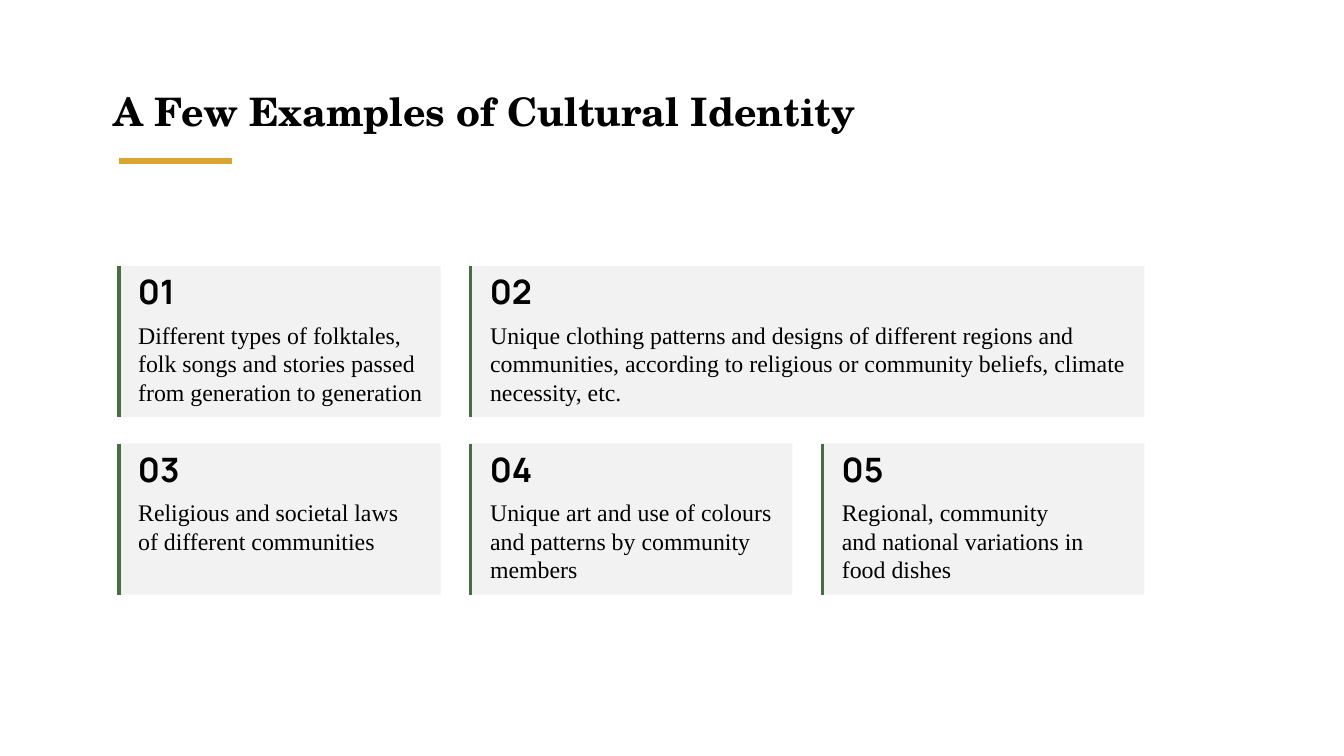
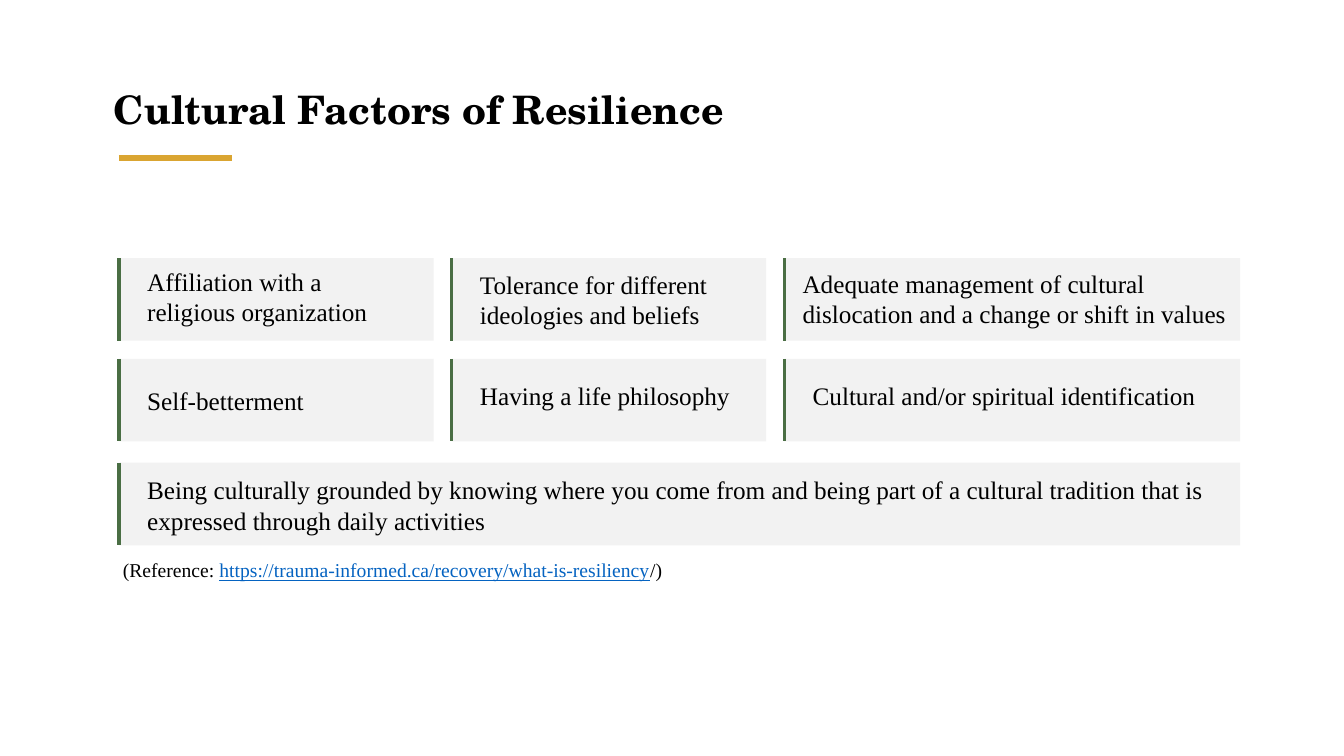
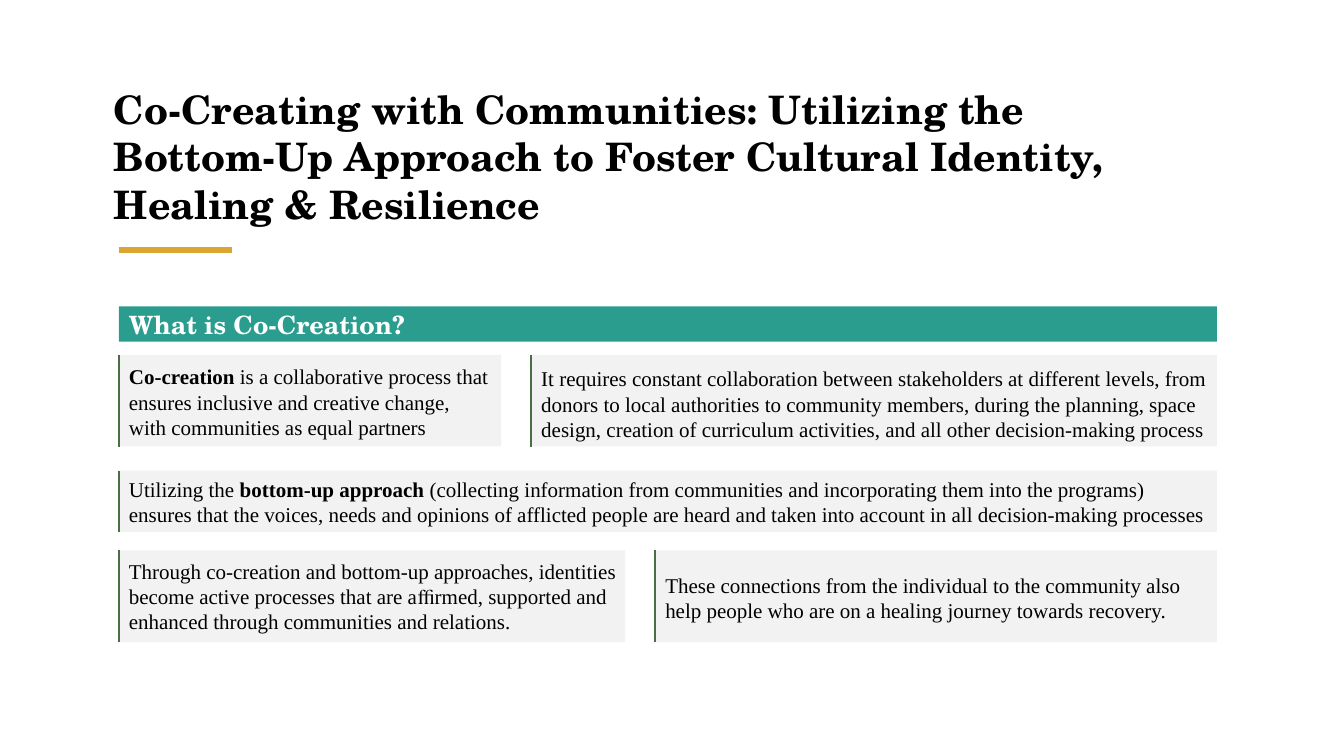
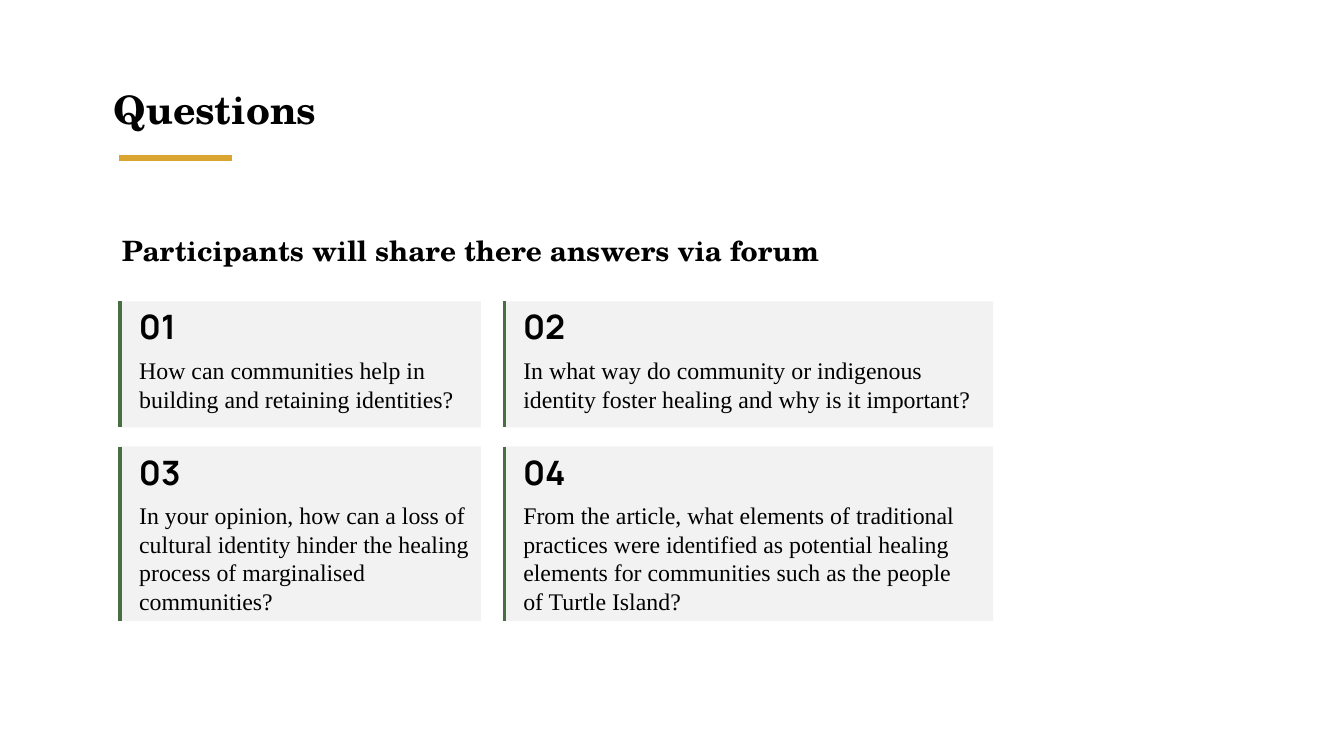
from lxml import etree
from pptx import Presentation
from pptx.dml.color import RGBColor
from pptx.enum.shapes import MSO_CONNECTOR, MSO_SHAPE
from pptx.enum.text import MSO_ANCHOR, MSO_AUTO_SIZE, PP_ALIGN
from pptx.oxml.ns import qn
from pptx.util import Inches, Pt

TOP, LEFT = MSO_ANCHOR.TOP, PP_ALIGN.LEFT
RECTANGLE, STRAIGHT = MSO_SHAPE.RECTANGLE, MSO_CONNECTOR.STRAIGHT
TITLE_ONLY = 5

BLACK, WHITE, GREY = "000000", "FFFFFF", "F2F2F2"
GOLD, GREEN, TEAL, LINK = "DAA531", "4A6E44", "2A9D8F", "0563C1"
SERIF, DISPLAY, NUMERAL = "Times New Roman", "TeX Gyre Schola", "Manrope"

MARGIN = 1.18
INSETS = (0.1, 0.05, 0.1, 0.05)
NUMBER_INSET = 0.19   # left inset of text in a numbered card
NUMBER_DROP = 0.54    # room kept above that text for the number

# A row is (top, height, column widths, cards).
# A card is (columns spanned, text, inset overrides).
THIRDS = [3.19] * 3
FACTOR_COLUMNS = [3.12, 3.12, 4.52]
QUESTION_COLUMNS = [3.58, 4.85]

SLIDES = [
    {
        "title": "A Few Examples of Cultural Identity",
        "title_top": 0.82, "rule": 1.6,
        "size": 17, "gap": 0.3, "numbered": True,
        "rows": [
            (2.64, 1.5, THIRDS, [
                (1, "Different types of folktales, folk songs and stories passed "
                    "from generation to generation", {}),
                (2, "Unique clothing patterns and designs of different regions and "
                    "communities, according to religious or community beliefs, "
                    "climate necessity, etc.", {}),
            ]),
            (4.4, 1.5, THIRDS, [
                (1, "Religious and societal laws of different communities",
                 {"right": 0.38}),
                (1, "Unique art and use of colours and patterns by community members", {}),
                (1, "Regional, community and national variations in food dishes",
                 {"right": 0.57}),
            ]),
        ],
    },
    {
        "title": "Cultural Factors of Resilience",
        "rule": 1.57, "size": 18, "gap": 0.18, "inset": 0.28,
        "rows": [
            (2.56, 0.82, FACTOR_COLUMNS, [
                (1, "Affiliation with a religious organization",
                 {"top": 0.08, "right": 0.62}),
                (1, "Tolerance for different ideologies and beliefs", {"top": 0.11}),
                (1, "Adequate management of cultural dislocation and a change or "
                    "shift in values", {"left": 0.18, "top": 0.1}),
            ]),
            (3.56, 0.82, FACTOR_COLUMNS, [
                (1, "Self-betterment", {"top": 0.26}),
                (1, "Having a life philosophy", {"top": 0.21}),
                (1, "Cultural and/or spiritual identification", {"top": 0.21}),
            ]),
            (4.59, 0.82, FACTOR_COLUMNS, [
                (3, "Being culturally grounded by knowing where you come from and "
                    "being part of a cultural tradition that is expressed through "
                    "daily activities", {"top": 0.12}),
            ]),
        ],
    },
    {
        "title": "Co-Creating with Communities: Utilizing the Bottom-Up Approach "
                 "to Foster Cultural Identity, Healing & Resilience",
        "title_height": 1.51, "rule": 2.48,
        "size": 15, "gap": 0.3, "accent": 1.5,
        "rows": [
            (3.52, 0.91, [3.79, 6.8], [
                (1, [("Co-creation", {"bold": True}),
                     (" is a collaborative process that ensures inclusive and "
                      "creative change, with communities as equal partners", {})],
                 {"top": 0.09}),
                (1, "It requires constant collaboration between stakeholders at "
                    "different levels, from donors to local authorities to community "
                    "members, during the planning, space design, creation of "
                    "curriculum activities, and all other decision-making process",
                 {"top": 0.11}),
            ]),
            (4.67, 0.61, [10.89], [
                (1, [("Utilizing the ", {}), ("bottom-up approach", {"bold": True}),
                     (" (collecting information from communities and incorporating "
                      "them into the programs) ensures that the voices, needs and "
                      "opinions of afflicted people are heard and taken into account "
                      "in all decision-making processes", {})], {"top": 0.06}),
            ]),
            (5.46, 0.91, [5.02, 5.57], [
                (1, "Through co-creation and bottom-up approaches, identities become "
                    "active processes that are aﬃrmed, supported and enhanced "
                    "through communities and relations.", {"top": 0.08, "right": 0.05}),
                (1, "These connections from the individual to the community also "
                    "help people who are on a healing journey towards recovery.",
                 {"top": 0.22}),
            ]),
        ],
    },
    {
        "title": "Questions",
        "rule": 1.57, "left": 1.19,
        "size": 17, "gap": 0.23, "numbered": True,
        "rows": [
            (2.99, 1.25, QUESTION_COLUMNS, [
                (1, "How can communities help in building and retaining identities?", {}),
                (1, "In what way do community or indigenous identity foster healing "
                    "and why is it important?", {}),
            ]),
            (4.43, 1.73, QUESTION_COLUMNS, [
                (1, "In your opinion, how can a loss of cultural identity hinder the "
                    "healing process of marginalised communities?", {}),
                (1, "From the article, what elements of traditional practices were "
                    "identified as potential healing elements for communities such "
                    "as the people of Turtle Island?", {"right": 0.2}),
            ]),
        ],
    },
]

REFERENCE = [
    ("(Reference: ", {}),
    ("https://trauma-informed.ca/recovery/what-is-resiliency",
     {"color": LINK, "underline": True}),
    ("/)", {}),
]


def rgb(color):
    return RGBColor.from_string(color)


def write(shape, text, size, font=SERIF, color=BLACK, bold=False, insets=INSETS):
    """Fill a shape with one paragraph; text is a string or (text, format) runs."""
    frame = shape.text_frame
    frame.word_wrap = True
    frame.auto_size = MSO_AUTO_SIZE.NONE
    frame.vertical_anchor = TOP
    (frame.margin_left, frame.margin_top,
     frame.margin_right, frame.margin_bottom) = map(Inches, insets)
    paragraph = frame.paragraphs[0]
    paragraph.alignment = LEFT
    for words, style in [(text, {})] if isinstance(text, str) else text:
        run = paragraph.add_run()
        run.text = words
        run.font.name, run.font.size = font, Pt(size)
        run.font.bold = style.get("bold", bold)
        run.font.underline = style.get("underline", False)
        run.font.color.rgb = rgb(style.get("color", color))


def add_text(slide, box, text, size, **style):
    write(slide.shapes.add_textbox(*map(Inches, box)), text, size, **style)


def add_panel(slide, box, fill, text, size, **style):
    panel = slide.shapes.add_shape(RECTANGLE, *map(Inches, box))
    panel.shadow.inherit = False
    panel.fill.solid()
    panel.fill.fore_color.rgb = rgb(fill)
    panel.line.fill.background()
    write(panel, text, size, **style)


def add_line(slide, ends, color, width):
    line = slide.shapes.add_connector(STRAIGHT, *map(Inches, ends))
    line.line.color.rgb = rgb(color)
    line.line.width = Pt(width)
    etree.SubElement(line._element.spPr, qn("a:effectLst"))


def add_title(slide, content):
    title = slide.shapes.title
    title.left, title.top = Inches(1.03), Inches(content.get("title_top", 0.8))
    title.width, title.height = Inches(10.29), Inches(content.get("title_height", 0.57))
    write(title, content["title"], 28, font=DISPLAY, bold=True)
    rule = content["rule"]
    add_line(slide, (MARGIN, rule, MARGIN + 1.12, rule), GOLD, 4.5)


def add_cards(slide, content):
    gap, numbered = content["gap"], content.get("numbered", False)
    left = content.get("left", MARGIN)
    inset = NUMBER_INSET if numbered else content.get("inset", 0.1)
    number = 0
    for top, height, columns, cards in content["rows"]:
        x, column = left, 0
        for span, text, custom in cards:
            width = sum(columns[column:column + span]) + gap * (span - 1)
            insets = (custom.get("left", inset), custom.get("top", NUMBER_DROP),
                      custom.get("right", 0.1), 0)
            add_panel(slide, (x, top, width, height), GREY, text,
                      content["size"], insets=insets)
            add_line(slide, (x, top, x, top + height), GREEN,
                     content.get("accent", 2.25))
            number += 1
            if numbered:
                add_text(slide, (x + NUMBER_INSET - 0.1, top, 0.66, 0.5),
                         f"{number:02}", 24, font=NUMERAL, bold=True)
            x += width + gap
            column += span


def main():
    deck = Presentation()
    deck.slide_width, deck.slide_height = Inches(13.33), Inches(7.5)
    slides = []
    for content in SLIDES:
        slide = deck.slides.add_slide(deck.slide_layouts[TITLE_ONLY])
        add_title(slide, content)
        add_cards(slide, content)
        slides.append(slide)

    _, factors, co_creation, questions = slides
    add_text(factors, (1.12, 5.49, 6.67, 0.34), REFERENCE, 14)
    add_panel(co_creation, (MARGIN, 3.04, 10.89, 0.35), TEAL, "What is Co-Creation?",
              18, font=DISPLAY, color=WHITE, bold=True, insets=(0.1, 0.03, 0.1, 0))
    add_text(questions, (1.11, 2.27, 8.14, 0.44),
             "Participants will share there answers via forum", 20,
             font=DISPLAY, bold=True)
    deck.save("out.pptx")


if __name__ == "__main__":
    main()
